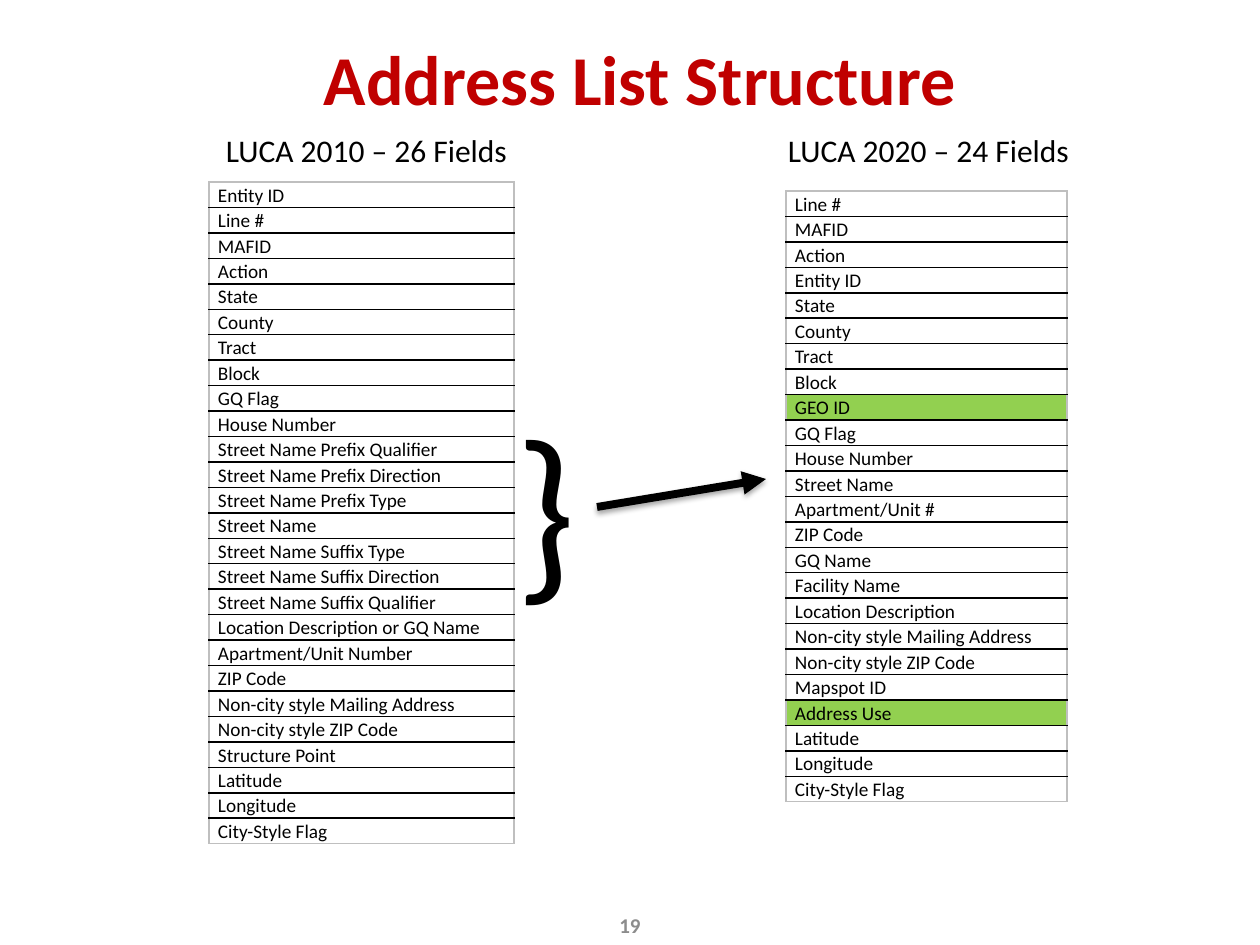
from lxml.etree import SubElement
from pptx import Presentation
from pptx.dml.color import RGBColor
from pptx.enum.shapes import MSO_CONNECTOR
from pptx.enum.text import MSO_ANCHOR, PP_ALIGN
from pptx.oxml import parse_xml
from pptx.oxml.ns import nsdecls, qn
from pptx.util import Pt

PX = 914400 / 126
BLACK = RGBColor(0x00, 0x00, 0x00)
RED = RGBColor(0xC0, 0x00, 0x00)
GREEN = RGBColor(0x92, 0xD0, 0x50)
GRAY = RGBColor(0x8C, 0x8C, 0x8C)
EDGE_GRAY = RGBColor(0xBF, 0xBF, 0xBF)

FIELDS_2010 = [
    "Entity ID", "Line #", "MAFID", "Action", "State", "County", "Tract", "Block",
    "GQ Flag", "House Number", "Street Name Prefix Qualifier",
    "Street Name Prefix Direction", "Street Name Prefix Type", "Street Name",
    "Street Name Suffix Type", "Street Name Suffix Direction",
    "Street Name Suffix Qualifier", "Location Description or GQ Name",
    "Apartment/Unit Number", "ZIP Code", "Non-city style Mailing Address",
    "Non-city style ZIP Code", "Structure Point", "Latitude", "Longitude",
    "City-Style Flag",
]
FIELDS_2020 = [
    "Line #", "MAFID", "Action", "Entity ID", "State", "County", "Tract", "Block",
    "GEO ID", "GQ Flag", "House Number", "Street Name", "Apartment/Unit #",
    "ZIP Code", "GQ Name", "Facility Name", "Location Description",
    "Non-city style Mailing Address", "Non-city style ZIP Code", "Mapspot ID",
    "Address Use", "Latitude", "Longitude", "City-Style Flag",
]
NEW_FIELDS = {"GEO ID", "Address Use"}


def emu(*lengths):
    return [round(length * PX) for length in lengths]


def add_text(text, box, size, color, bold=False, anchor=MSO_ANCHOR.TOP,
             alignment=PP_ALIGN.CENTER):
    frame = slide.shapes.add_textbox(*emu(*box)).text_frame
    frame.word_wrap = True
    frame.vertical_anchor = anchor
    paragraph = frame.paragraphs[0]
    paragraph.text = text
    paragraph.alignment = alignment
    paragraph.font.name = "Calibri"
    paragraph.font.size = Pt(size)
    paragraph.font.bold = bold
    paragraph.font.color.rgb = color


presentation = Presentation()
presentation.slide_width, presentation.slide_height = emu(1260, 945)
slide = presentation.slides.add_slide(presentation.slide_layouts[6])

add_text("Address List Structure", (73, 30, 1134, 95), 40, RED, True, MSO_ANCHOR.MIDDLE)
add_text("LUCA 2010 – 26 Fields", (88, 125, 557, 708), 18, BLACK)
add_text("LUCA 2020 – 24 Fields", (650, 125, 557, 708), 18, BLACK)

for fields, box in [(FIELDS_2010, (209, 182, 305, 662)),
                    (FIELDS_2020, (786, 191, 281, 611))]:
    table = slide.shapes.add_table(len(fields), 1, *emu(*box)).table
    table.first_row = False
    table.horz_banding = False
    last = len(fields) - 1
    for row, field in enumerate(fields):
        cell = table.cell(row, 0)
        cell.margin_left, cell.margin_right = emu(9, 9)
        cell.margin_top = cell.margin_bottom = 0
        paragraph = cell.text_frame.paragraphs[0]
        paragraph.text = field
        paragraph.line_spacing = 1.07
        paragraph.font.name = "Calibri"
        paragraph.font.size = Pt(11)
        paragraph.font.color.rgb = BLACK

        edges = {
            "a:lnL": EDGE_GRAY,
            "a:lnR": EDGE_GRAY,
            "a:lnT": EDGE_GRAY if row == 0 else BLACK,
            "a:lnB": EDGE_GRAY if row == last else BLACK,
        }
        properties = cell._tc.get_or_add_tcPr()
        for tag, color in edges.items():
            border = SubElement(properties, qn(tag), w=str(Pt(1)))
            fill = SubElement(border, qn("a:solidFill"))
            SubElement(fill, qn("a:srgbClr"), val=str(color))
        if field in NEW_FIELDS:
            cell.fill.solid()
            cell.fill.fore_color.rgb = GREEN
        else:
            cell.fill.background()

add_text("}", (503, 381, 84, 246), 110, BLACK, alignment=PP_ALIGN.LEFT)

arrow = slide.shapes.add_connector(MSO_CONNECTOR.STRAIGHT, *emu(597, 507, 766, 479))
arrow.line.color.rgb = BLACK
arrow.line.width = Pt(4.5)
SubElement(arrow.line._get_or_add_ln(), qn("a:tailEnd"), type="triangle")
arrow._element.spPr.append(parse_xml(
    f'<a:effectLst {nsdecls("a")}>'
    f'<a:outerShdw blurRad="{Pt(3.1)}" dist="{Pt(1.8)}" dir="5400000" rotWithShape="0">'
    '<a:srgbClr val="000000"><a:alpha val="35000"/></a:srgbClr>'
    '</a:outerShdw></a:effectLst>'))

add_text("19", (0, 905, 1260, 40), 12, GRAY, True, MSO_ANCHOR.MIDDLE)

presentation.save("out.pptx")
